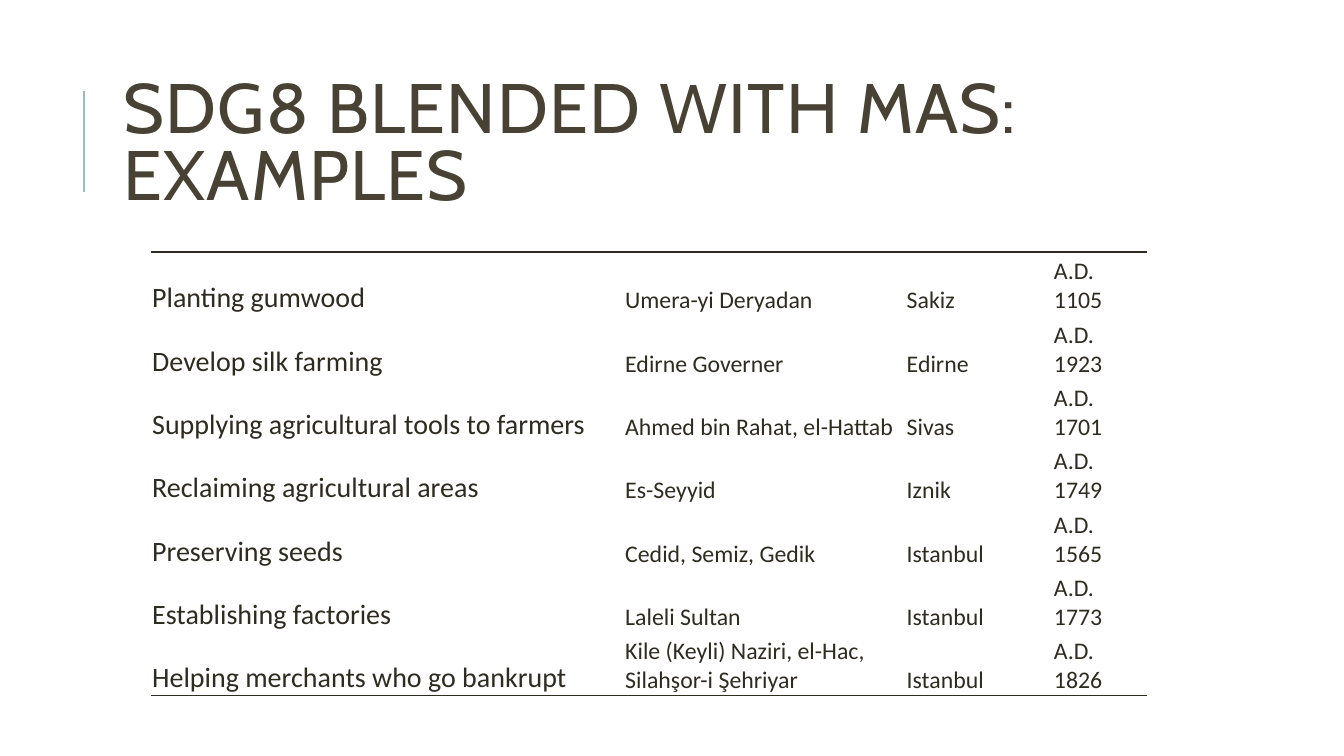
from pptx import Presentation
from pptx.dml.color import RGBColor
from pptx.enum.shapes import MSO_CONNECTOR as Connector
from pptx.enum.text import MSO_ANCHOR as Anchor
from pptx.oxml.ns import qn
from pptx.util import Pt
from lxml.etree import Element, SubElement

TITLE_BROWN = RGBColor(0x47, 0x42, 0x33)
INK = RGBColor(0x2E, 0x2B, 0x21)
ACCENT = RGBColor(0x9C, 0xBE, 0xBD)

COLUMN_WIDTHS = (337.9, 201.1, 105.2, 67)
ROW_HEIGHT = 45.25
EXAMPLES = (
    ("Planting gumwood", "Umera-yi Deryadan", "Sakiz", "A.D. 1105"),
    ("Develop silk farming", "Edirne Governer", "Edirne", "A.D. 1923"),
    ("Supplying agricultural tools to farmers", "Ahmed bin Rahat, el-Hattab", "Sivas", "A.D. 1701"),
    ("Reclaiming agricultural areas", "Es-Seyyid", "Iznik", "A.D. 1749"),
    ("Preserving seeds", "Cedid, Semiz, Gedik", "Istanbul", "A.D. 1565"),
    ("Establishing factories", "Laleli Sultan", "Istanbul", "A.D. 1773"),
    ("Helping merchants who go bankrupt", "Kile (Keyli) Naziri, el-Hac, Silahşor-i Şehriyar",
     "Istanbul", "A.D. 1826"),
)


def write(frame, text, *, font, size, color, line_spacing=1.0, tracking=None):
    paragraph = frame.paragraphs[0]
    paragraph.line_spacing = line_spacing
    run = paragraph.add_run()
    run.text = text
    run.font.name = font
    run.font.size = Pt(size)
    run.font.color.rgb = color
    if tracking:
        run.font._element.set("spc", str(int(tracking * 100)))


class SlideBuilder:
    """Holds the fonts and the slide being filled."""

    title_font = "Cabin"
    body_font = "Calibri"

    def __init__(self, slide):
        self.slide = slide

    def line(self, x1, y1, x2, y2, color, width):
        connector = self.slide.shapes.add_connector(
            Connector.STRAIGHT, Pt(x1), Pt(y1), Pt(x2), Pt(y2))
        connector.line.color.rgb = color
        connector.line.width = Pt(width)
        SubElement(connector._element.spPr, qn("a:effectLst"))

    def title(self, text, left, top, width, height):
        box = self.slide.shapes.add_textbox(Pt(left), Pt(top), Pt(width), Pt(height))
        frame = box.text_frame
        frame.word_wrap = True
        frame.vertical_anchor = Anchor.MIDDLE
        write(frame, text, font=self.title_font, size=50, color=TITLE_BROWN,
              line_spacing=0.8, tracking=1)

    def table(self, rows, left, top):
        table = self.slide.shapes.add_table(
            len(rows), len(COLUMN_WIDTHS), Pt(left), Pt(top),
            Pt(sum(COLUMN_WIDTHS)), Pt(ROW_HEIGHT * len(rows))).table
        table.first_row = table.horz_banding = False
        for column, width in zip(table.columns, COLUMN_WIDTHS):
            column.width = Pt(width)
        for r, row in enumerate(rows):
            table.rows[r].height = Pt(ROW_HEIGHT)
            for c, text in enumerate(row):
                cell = table.cell(r, c)
                cell.vertical_anchor = Anchor.BOTTOM
                cell.margin_left = cell.margin_right = cell.margin_top = Pt(0.7)
                cell.margin_bottom = 0
                cell.fill.background()
                write(cell.text_frame, text, font=self.body_font,
                      size=20 if c == 0 else 17, color=INK)
                self.borders(cell, top=r == 0, bottom=r == len(rows) - 1)

    def borders(self, cell, top, bottom):
        properties = cell._tc.get_or_add_tcPr()
        sides = (("a:lnL", False), ("a:lnR", False), ("a:lnT", top), ("a:lnB", bottom))
        for position, (tag, visible) in enumerate(sides):
            edge = Element(qn(tag), w=str(Pt(1)))
            if visible:
                fill = SubElement(edge, qn("a:solidFill"))
                SubElement(fill, qn("a:srgbClr"), val=str(INK))
            else:
                SubElement(edge, qn("a:noFill"))
            properties.insert(position, edge)


def main():
    presentation = Presentation()
    presentation.slide_width, presentation.slide_height = Pt(960), Pt(540)
    builder = SlideBuilder(presentation.slides.add_slide(presentation.slide_layouts[6]))

    # Heading with its accent rule
    builder.line(60, 136.8, 60, 64.8, ACCENT, 1.5)
    builder.title("SDG8 BLENDED WITH MAS: EXAMPLES", 81, 46, 765, 118)

    # Examples
    builder.table(EXAMPLES, 108, 180)

    presentation.save("out.pptx")


if __name__ == "__main__":
    main()
